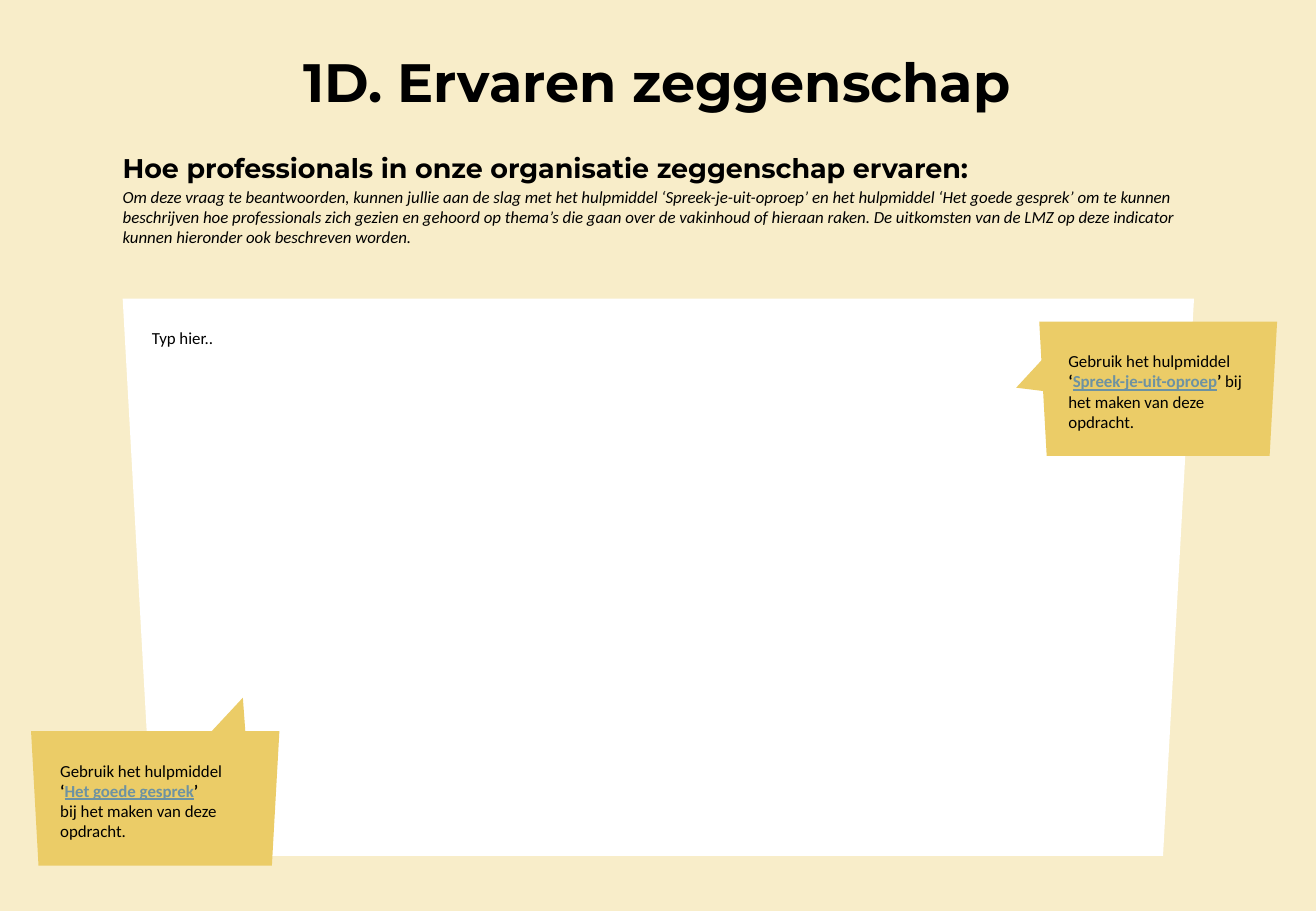
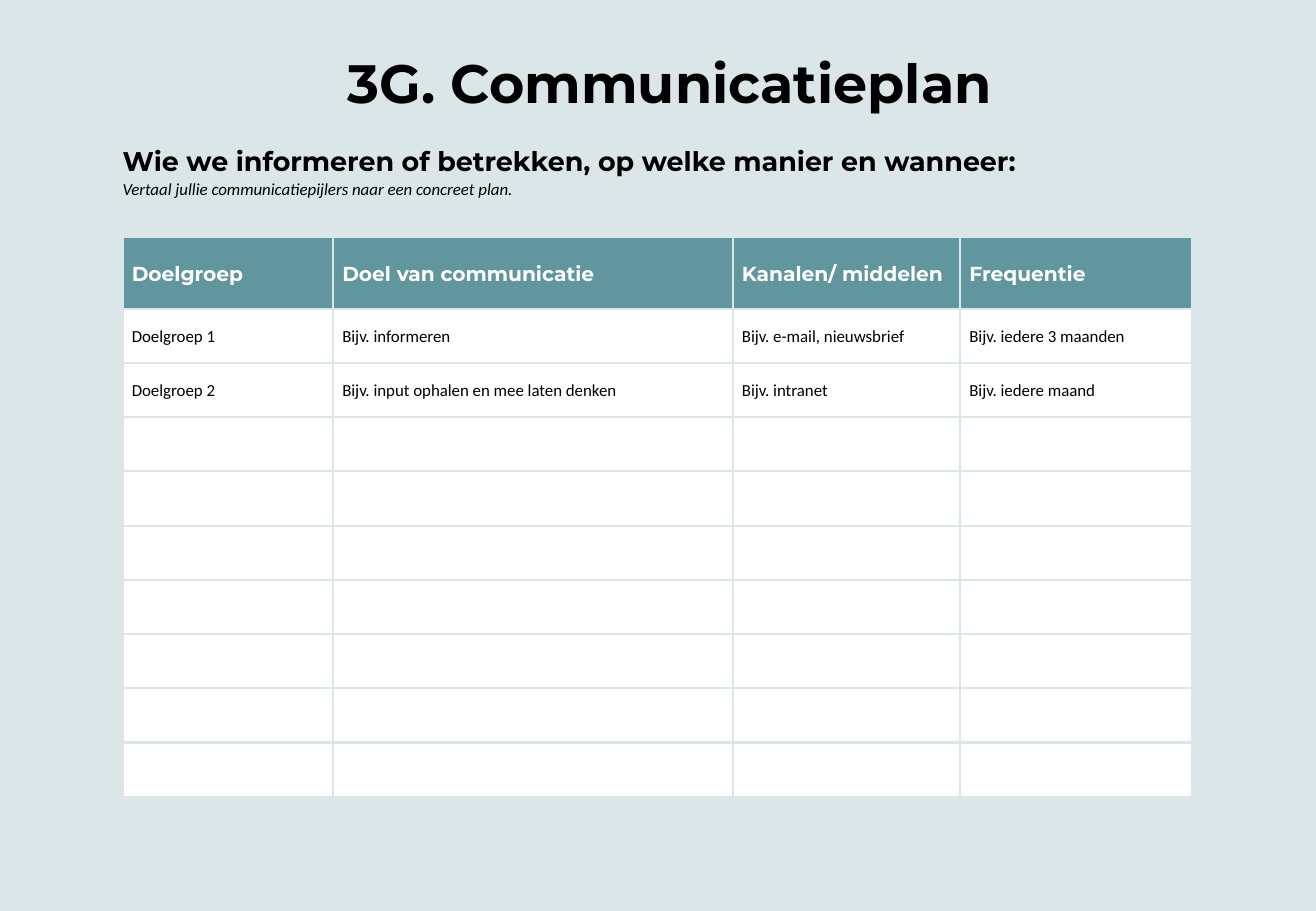
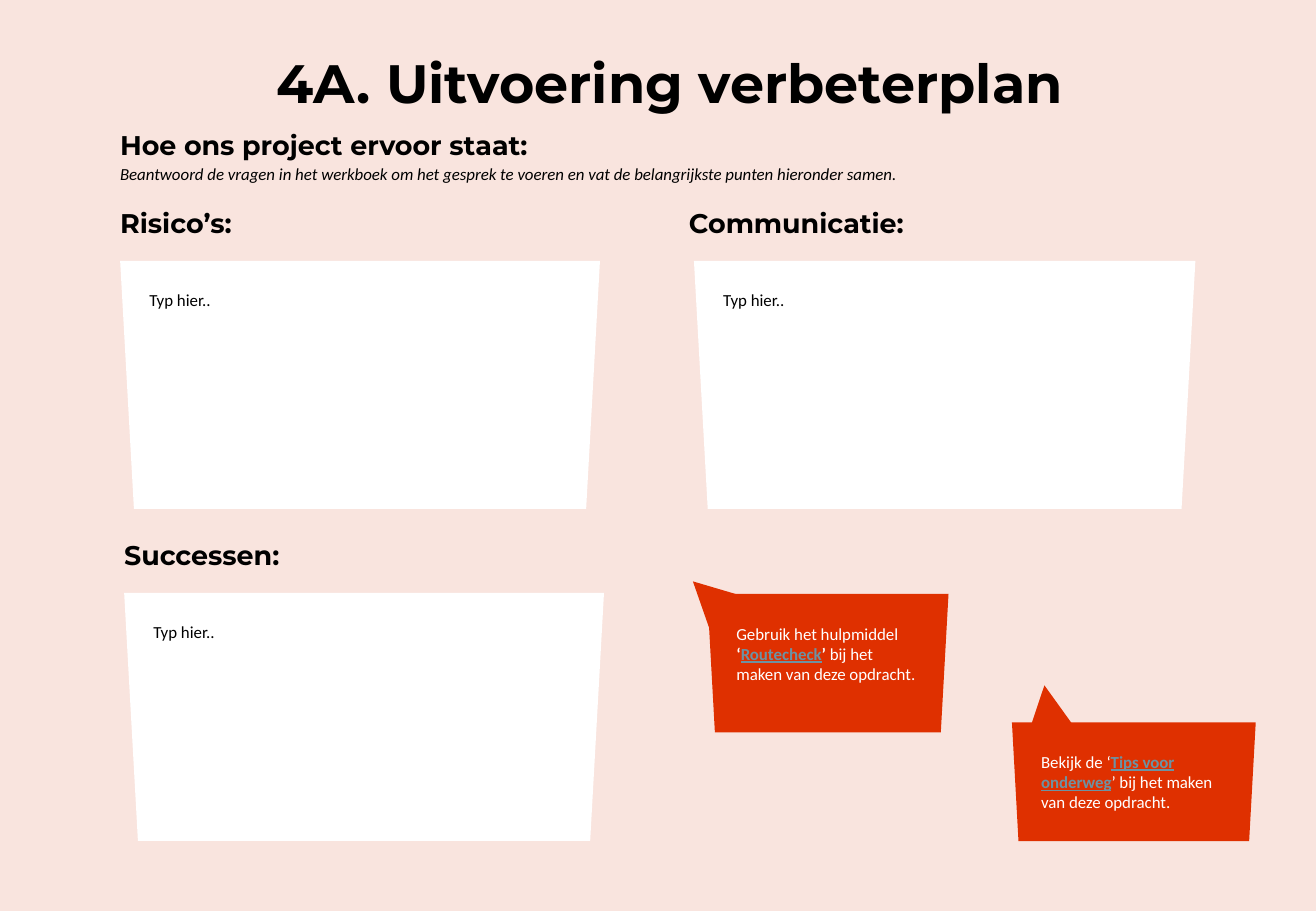
from lxml.etree import SubElement
from pptx import Presentation
from pptx.dml.color import RGBColor
from pptx.enum.shapes import MSO_SHAPE
from pptx.enum.text import MSO_ANCHOR, MSO_AUTO_SIZE, PP_ALIGN
from pptx.oxml.ns import qn
from pptx.util import Pt

COLORS = {
    "black": "000000",
    "white": "FFFFFF",
    "sand": "F8EDC9",
    "gold": "EBCC67",
    "mist": "DAE6E7",
    "teal": "62969E",
    "blush": "F9E4DE",
    "red": "DF3000",
    "link": "6D92A2",
}
HEAD, BODY = "Montserrat", "Calibri"
LEFT, WIDE = 72.7, 635
PAD = 17.3
TAPER = 18


def rgb(name):
    return RGBColor.from_string(COLORS[name])


def add_run(para, text, size=10, face=BODY, color="black",
            bold=False, italic=False, under=False):
    run = para.add_run()
    run.text = text
    font = run.font
    font.size, font.name = Pt(size), face
    font.bold, font.italic, font.underline = bold, italic, under
    font.color.rgb = rgb(color)


def set_frame(frame, pad=0):
    frame.word_wrap = True
    frame.auto_size = MSO_AUTO_SIZE.NONE
    frame.vertical_anchor = MSO_ANCHOR.TOP
    frame.margin_left = frame.margin_right = Pt(pad)
    frame.margin_top = frame.margin_bottom = Pt(pad)


def paint(shape, color):
    shape.shadow.inherit = False
    shape.fill.solid()
    shape.fill.fore_color.rgb = rgb(color)
    shape.line.fill.background()


def add_page(deck, back, title, box):
    slide = deck.slides.add_slide(deck.slide_layouts[5])
    slide.background.fill.solid()
    slide.background.fill.fore_color.rgb = rgb(back)
    shape = slide.shapes.title
    shape.left, shape.top, shape.width, shape.height = map(Pt, box)
    set_frame(shape.text_frame)
    para = shape.text_frame.paragraphs[0]
    para.alignment = PP_ALIGN.CENTER
    add_run(para, title, 32, HEAD, bold=True)
    return slide


def add_head(slide, box, head, note=None):
    frame = slide.shapes.add_textbox(*map(Pt, box)).text_frame
    set_frame(frame)
    add_run(frame.paragraphs[0], head, 16, HEAD, bold=True)
    if note:
        para = frame.add_paragraph()
        para.space_before = Pt(1.2)
        add_run(para, note, italic=True)


def add_panel(shapes, box, color, paras):
    x, y, w, h = box
    cut = h / TAPER
    form = shapes.build_freeform(Pt(x), Pt(y))
    form.add_line_segments([
        (Pt(x + w), Pt(y)),
        (Pt(x + w - cut), Pt(y + h)),
        (Pt(x + cut), Pt(y + h)),
    ])
    panel = form.convert_to_shape()
    paint(panel, color)
    frame = panel.text_frame
    set_frame(frame, PAD)
    for i, runs in enumerate(paras):
        para = frame.add_paragraph() if i else frame.paragraphs[0]
        para.alignment = PP_ALIGN.LEFT
        for text, style in runs:
            add_run(para, text, **style)


def add_field(slide, box):
    add_panel(slide.shapes, box, "white", [[("Typ hier..", {})]])


def add_tip(slide, box, color, tail, turn, paras):
    shapes = slide.shapes.add_group_shape().shapes
    add_panel(shapes, box, color, paras)
    dx, dy, w, h = tail
    peak = shapes.add_shape(MSO_SHAPE.ISOSCELES_TRIANGLE,
                            Pt(box[0] + dx), Pt(box[1] + dy), Pt(w), Pt(h))
    peak.rotation = turn
    paint(peak, color)


def add_edges(cell, color, width):
    props = cell._tc.get_or_add_tcPr()
    for i, side in enumerate("LRTB"):
        edge = SubElement(props, qn(f"a:ln{side}"), w=str(Pt(width)))
        fill = SubElement(edge, qn("a:solidFill"))
        SubElement(fill, qn("a:srgbClr"), val=COLORS[color])
        props.insert(i, edge)


def add_grid(slide, spot, cols, tall, rows, count):
    high = [tall[0]] + [tall[1]] * (count - 1)
    size = (sum(cols), sum(high))
    grid = slide.shapes.add_table(count, len(cols), *map(Pt, spot + size)).table
    grid.horz_banding = False
    for col, width in zip(grid.columns, cols):
        col.width = Pt(width)
    for r, height in enumerate(high):
        grid.rows[r].height = Pt(height)
        for c in range(len(cols)):
            cell = grid.cell(r, c)
            cell.fill.solid()
            cell.fill.fore_color.rgb = rgb("white" if r else "teal")
            add_edges(cell, "mist", 1.47)
            cell.vertical_anchor = MSO_ANCHOR.MIDDLE
            cell.margin_left = cell.margin_right = Pt(5.4)
            cell.margin_top = cell.margin_bottom = Pt(3.6)
            if r >= len(rows):
                continue
            para = cell.text_frame.paragraphs[0]
            para.line_spacing = Pt(13.5 if r else 16.5)
            if r:
                add_run(para, rows[r][c])
            else:
                add_run(para, rows[r][c], 12, HEAD, "white", bold=True)


def make_voice(deck):
    slide = add_page(deck, "sand", "1D. Ervaren zeggenschap",
                     (35.3, 28.8, 708.5, 38.2))
    add_field(slide, (LEFT, 177.1, WIDE, 330.3))
    add_head(
        slide, (LEFT, 90, WIDE, 57),
        "Hoe professionals in onze organisatie zeggenschap ervaren:",
        "Om deze vraag te beantwoorden, kunnen jullie aan de slag met het "
        "hulpmiddel ‘Spreek-je-uit-oproep’ en het hulpmiddel ‘Het goede "
        "gesprek’ om te kunnen beschrijven hoe professionals zich gezien en "
        "gehoord op thema’s die gaan over de vakinhoud of hieraan raken. De "
        "uitkomsten van de LMZ op deze indicator kunnen hieronder ook "
        "beschreven worden.")
    bold = {"bold": True}
    link = {"color": "link", "bold": True, "under": True}
    add_tip(slide, (18.4, 433.4, 147.2, 79.7), "gold",
            (104.7, -20.8, 30.2, 34.6), 19.4, [
                [("Gebruik het hulpmiddel ", {}), ("‘", bold),
                 ("Het goede gesprek", link), ("’", bold)],
                [("bij het maken van deze opdracht.", {})]])
    add_tip(slide, (616, 190.6, 141, 79.7), "gold",
            (-14.8, 21.8, 26.6, 25.9), 249.9, [
                [("Gebruik het hulpmiddel ", {}), ("‘", bold),
                 ("Spreek-je-uit-oproep", link), ("’ ", bold),
                 ("bij het maken van deze", {})],
                [("opdracht.", {})]])


def make_plan(deck):
    slide = add_page(deck, "mist", "3G. Communicatieplan",
                     (29.5, 29.5, 735, 38.2))
    add_head(slide, (LEFT, 85.7, WIDE, 32.4),
             "Wie we informeren of betrekken, op welke manier en wanneer:",
             "Vertaal jullie communicatiepijlers naar een concreet plan.")
    rows = [
        ("Doelgroep", "Doel van communicatie", "Kanalen/ middelen",
         "Frequentie"),
        ("Doelgroep 1", "Bijv. informeren", "Bijv. e-mail, nieuwsbrief",
         "Bijv. iedere 3 maanden"),
        ("Doelgroep 2", "Bijv. input ophalen en mee laten denken",
         "Bijv. intranet", "Bijv. iedere maand"),
    ]
    add_grid(slide, (LEFT, 140.4), (124.8, 236.9, 134.8, 137.5),
             (42.6, 32.15), rows, 10)


def make_check(deck):
    slide = add_page(deck, "blush", "4A. Uitvoering verbeterplan",
                     (29.5, 29.5, 735, 38.2))
    add_head(slide, (71.2, 76.3, 636.5, 32.4),
             "Hoe ons project ervoor staat:",
             "Beantwoord de vragen in het werkboek om het gesprek te voeren "
             "en vat de belangrijkste punten hieronder samen.")
    for name, x, y, shift, width in (
            ("Risico’s:", 71.2, 122.4, 0, 284.4),
            ("Communicatie:", 408.4, 122.4, 2.9, 297.2),
            ("Successen:", 73.6, 319.3, 0, 284.4)):
        add_head(slide, (x, y, 200, 19.5), name)
        add_field(slide, (x + shift, y + 32.2, width, 147))
    plain = {"color": "white"}
    bold = {"color": "white", "bold": True}
    link = {"color": "link", "bold": True, "under": True}
    add_tip(slide, (599.8, 428.2, 144.5, 70.4), "red",
            (7.9, -22.1, 26.6, 25.9), 351.4, [
                [("Bekijk de ‘", plain), ("Tips voor onderweg", link),
                 ("’ bij het maken van deze opdracht.", plain)]])
    add_tip(slide, (419.2, 352.1, 143, 82), "red",
            (-12.4, -11.5, 26.6, 25.9), 313.6, [
                [("Gebruik het hulpmiddel ", plain), ("‘", bold),
                 ("Routecheck", link), ("’ ", bold),
                 ("bij het maken van deze opdracht.", plain)]])


def main():
    deck = Presentation()
    deck.slide_width, deck.slide_height = Pt(780), Pt(540)
    for make in (make_voice, make_plan, make_check):
        make(deck)
    deck.save("out.pptx")


if __name__ == "__main__":
    main()
